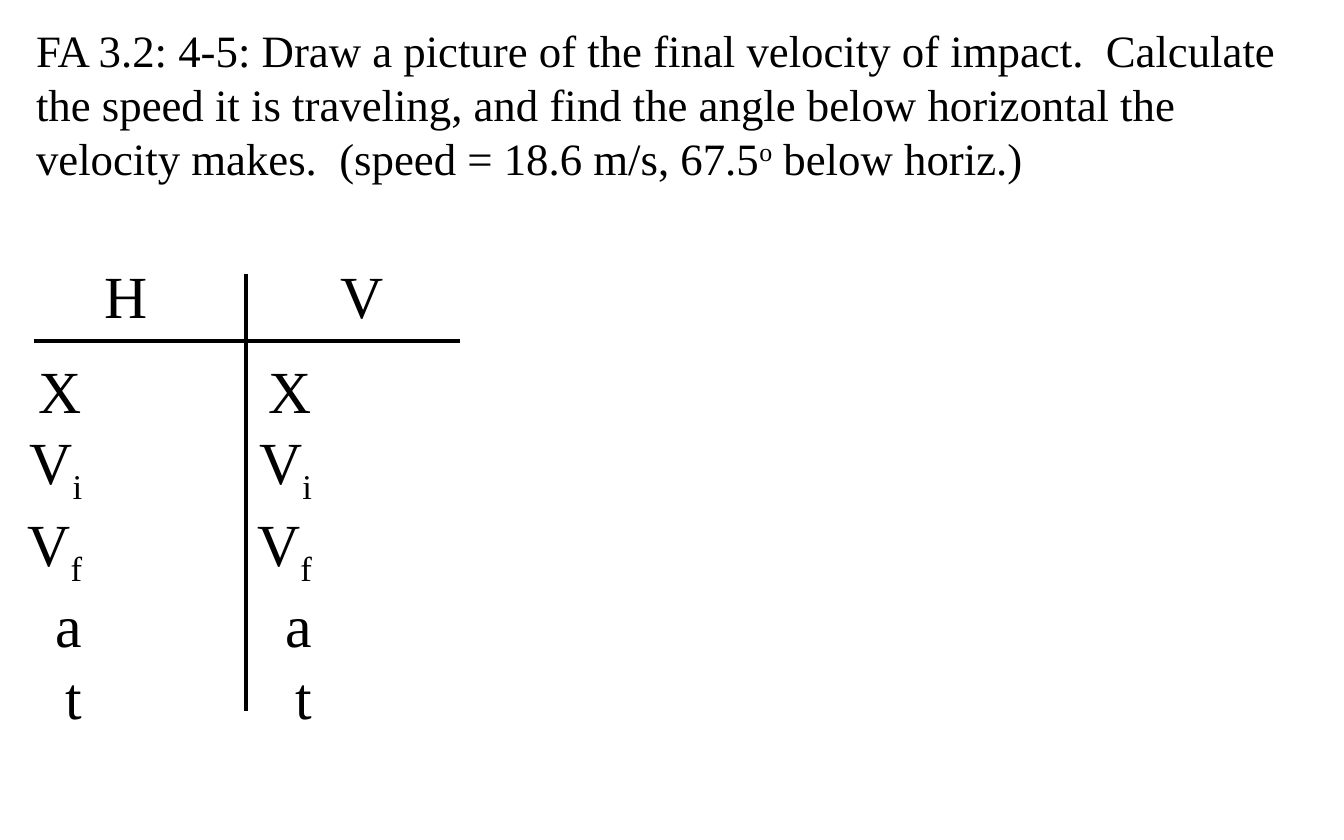
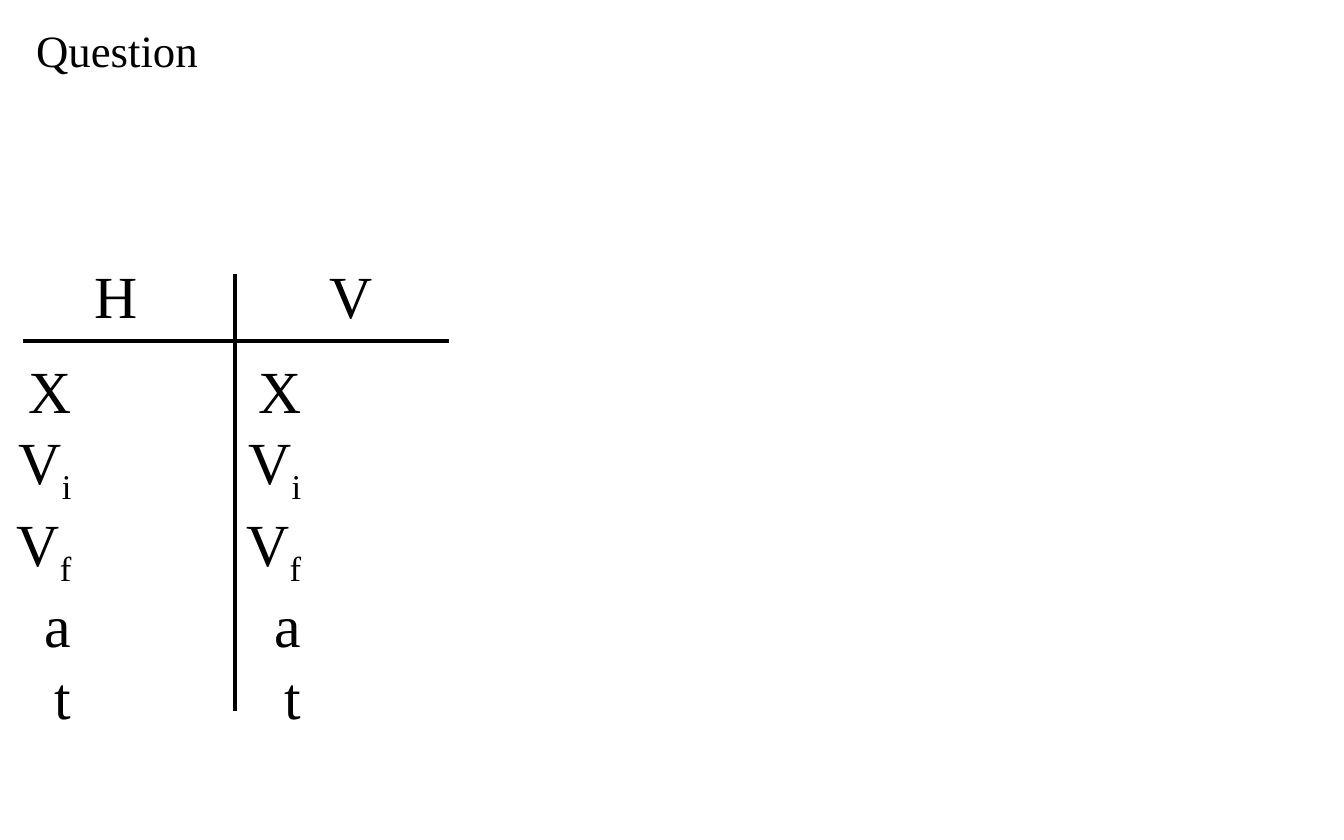
from dataclasses import dataclass

from lxml.etree import SubElement
from pptx import Presentation
from pptx.dml.color import RGBColor
from pptx.enum.shapes import MSO_CONNECTOR as Connector
from pptx.enum.text import MSO_AUTO_SIZE as AutoSize, PP_ALIGN as Align
from pptx.oxml.ns import qn
from pptx.util import Inches, Pt


@dataclass(frozen=True)
class Theme:
    """Colours, font and sizes shared by the slides."""
    ink: RGBColor = RGBColor(0, 0, 0)
    paper: RGBColor = RGBColor(255, 255, 255)
    font: str = "Times New Roman"
    question_size: int = 24
    table_size: int = 32
    rule_width: int = 2
    superscript: int = 30
    subscript: int = -25


THEME = Theme()
HEADINGS = ["H", "V"]
QUANTITIES = [
    [("X", 0)],
    [("V", 0), ("i", THEME.subscript)],
    [("V", 0), ("f", THEME.subscript)],
    [("a", 0)],
    [("t", 0)],
]
QUESTIONS = [
    (
        [
            ("FA 3.2: 4-5: Draw a picture of the final velocity of impact.  "
             "Calculate the speed it is traveling, and find the angle below "
             "horizontal the velocity makes.  (speed = 18.6 m/s, 67.5", 0),
            ("o", THEME.superscript),
            (" below horiz.)", 0),
        ],
        1.31,
        0.08,
    ),
    ([("Question", 0)], 0.5, 0),
]


def add_text(shapes, box, lines, size, align=Align.LEFT, wrap=False):
    """Add a text box whose lines are lists of (text, baseline) runs."""
    shape = shapes.add_textbox(*map(Inches, box))
    frame = shape.text_frame
    frame.word_wrap = wrap
    frame.auto_size = AutoSize.SHAPE_TO_FIT_TEXT
    for index, line in enumerate(lines):
        paragraph = frame.add_paragraph() if index else frame.paragraphs[0]
        paragraph.alignment = align
        paragraph.font.name = THEME.font
        paragraph.font.size = Pt(size)
        paragraph.font.color.rgb = THEME.ink
        for text, baseline in line:
            run = paragraph.add_run()
            run.text = text
            if baseline:
                run._r.get_or_add_rPr().set("baseline", str(baseline * 1000))


def add_rule(shapes, start, end):
    """Add a straight line without a shadow."""
    rule = shapes.add_connector(Connector.STRAIGHT, *map(Inches, start + end))
    rule.line.color.rgb = THEME.ink
    rule.line.width = Pt(THEME.rule_width)
    SubElement(rule._element.spPr, qn("a:effectLst"))


def add_question(slide, box, runs):
    """Write the question across the top of the slide."""
    add_text(slide.shapes, box, [runs], THEME.question_size, wrap=True)


def add_motion_table(slide, left, top):
    """Draw the grouped chart of horizontal and vertical quantities."""
    shapes = slide.shapes.add_group_shape().shapes
    for column in range(len(HEADINGS)):
        box = (left + 1.71 * column, top + 0.7, 0.63, 2.79)
        add_text(shapes, box, QUANTITIES, THEME.table_size, Align.RIGHT)
    add_rule(shapes, (left + 0.17, top + 0.66), (left + 3.34, top + 0.66))
    add_rule(shapes, (left + 1.75, top + 0.16), (left + 1.75, top + 3.41))
    for column, heading in enumerate(HEADINGS):
        box = (left + 0.59 + 1.75 * column, top, 0.53, 0.64)
        add_text(shapes, box, [[(heading, 0)]], THEME.table_size, Align.RIGHT)


def add_problem_slide(presentation, question, question_height, table_left):
    """Add a slide with a question and its motion table."""
    slide = presentation.slides.add_slide(presentation.slide_layouts[6])
    slide.background.fill.solid()
    slide.background.fill.fore_color.rgb = THEME.paper
    add_question(slide, (0.17, 0.12, 9.67, question_height), question)
    add_motion_table(slide, table_left, 1.88)


def main():
    """Build and save the presentation."""
    presentation = Presentation()
    presentation.slide_width = Inches(10)
    presentation.slide_height = Inches(6.25)
    for question, question_height, table_left in QUESTIONS:
        add_problem_slide(presentation, question, question_height, table_left)
    presentation.save("out.pptx")


if __name__ == "__main__":
    main()
